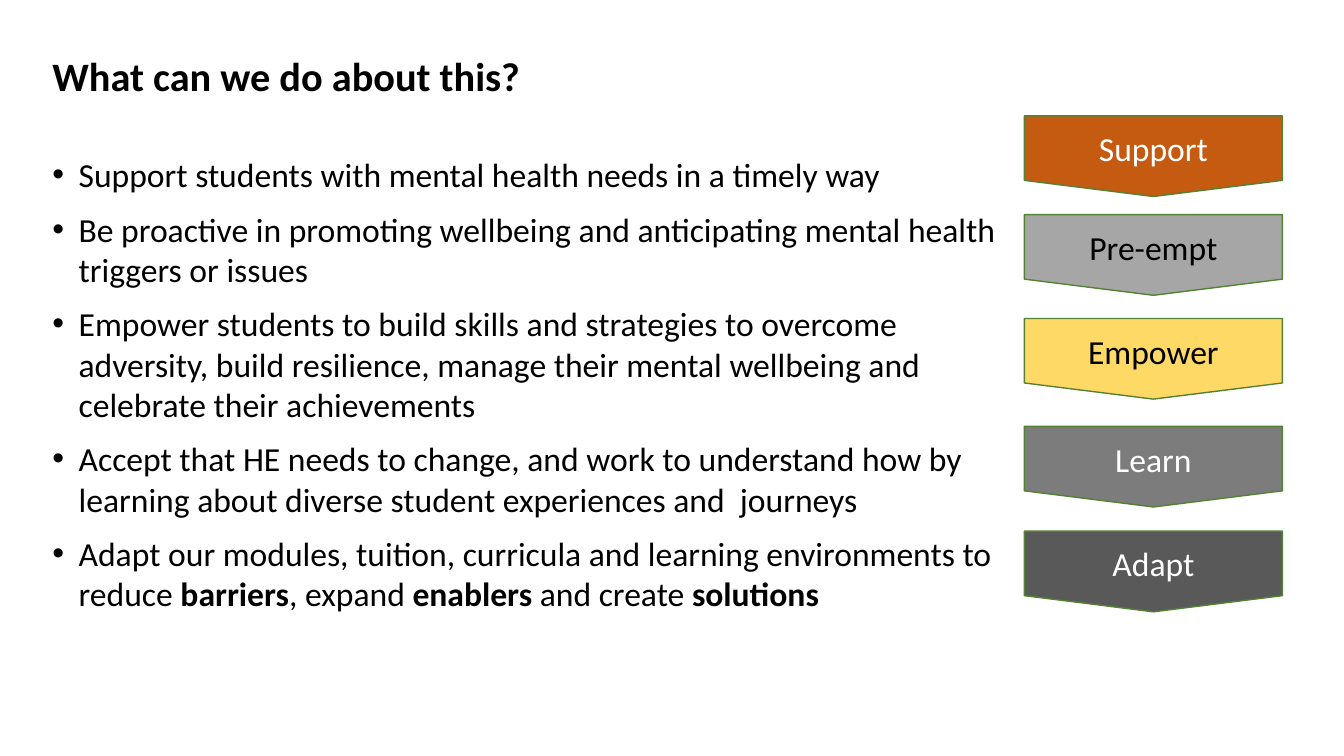
import pptx
import pptx.util
import pptx.dml.color
import pptx.enum.shapes
import pptx.enum.text
import lxml.etree
import pptx.oxml.ns

Inches = pptx.util.Inches
Pt = pptx.util.Pt

ACTIONS = [
    "Support students with mental health needs in a timely way",
    "Be proactive in promoting wellbeing and anticipating mental health triggers or issues",
    "Empower students to build skills and strategies to overcome adversity, "
    "build resilience, manage their mental wellbeing and celebrate their achievements",
    "Accept that HE needs to change, and work to understand how by "
    "learning about diverse student experiences and  journeys",
    "Adapt our modules, tuition, curricula and learning environments to "
    "reduce **barriers**, expand **enablers** and create **solutions**",
]

STEPS = [
    ("Support", 1.15, "C55A11", "FFFFFF"),
    ("Pre-empt", 2.13, "A6A6A6", "000000"),
    ("Empower", 3.16, "FFD966", "000000"),
    ("Learn", 4.23, "7C7C7C", "FFFFFF"),
    ("Adapt", 5.27, "595959", "FFFFFF"),
]


def color(value):
    return pptx.dml.color.RGBColor.from_string(value)


def write(para, text, size=24, fill="000000", bold=False, align=None):
    para.alignment = align
    for index, part in enumerate(text.split("**")):
        if part:
            span = para.add_run()
            span.text = part
            span.font.name = "Calibri"
            span.font.size = Pt(size)
            span.font.bold = bold or index % 2 == 1
            span.font.color.rgb = color(fill)


def add_bullet(para):
    props = para._p.get_or_add_pPr()
    props.set("marL", str(Inches(0.26)))
    props.set("indent", str(Inches(-0.26)))
    font = lxml.etree.SubElement(props, pptx.oxml.ns.qn("a:buFont"))
    font.set("typeface", "Arial")
    mark = lxml.etree.SubElement(props, pptx.oxml.ns.qn("a:buChar"))
    mark.set("char", "•")


def add_text_frame(page, left, top, width, height):
    box = page.shapes.add_textbox(Inches(left), Inches(top), Inches(width), Inches(height))
    frame = box.text_frame
    frame.word_wrap = True
    frame.margin_left = frame.margin_right = frame.margin_top = frame.margin_bottom = 0
    return frame


def add_title(page, text):
    frame = add_text_frame(page, 0.52, 0.5, 9.5, 0.5)
    frame.vertical_anchor = pptx.enum.text.MSO_ANCHOR.MIDDLE
    write(frame.paragraphs[0], text, size=28.8, bold=True)


def add_bullets(page, items):
    frame = add_text_frame(page, 0.52, 1.53, 9.39, 5.48)
    for index, item in enumerate(items):
        para = frame.add_paragraph() if index else frame.paragraphs[0]
        para.space_before = Pt(10)
        add_bullet(para)
        write(para, item)


def add_step(page, label, top, fill, text_fill):
    step = page.shapes.add_shape(
        pptx.enum.shapes.MSO_SHAPE.FLOWCHART_OFFPAGE_CONNECTOR,
        Inches(10.16), Inches(top), Inches(2.56), Inches(0.8))
    step.shadow.inherit = False
    step.fill.solid()
    step.fill.fore_color.rgb = color(fill)
    step.line.color.rgb = color("548235")
    step.line.width = Pt(1)
    step.text_frame.vertical_anchor = pptx.enum.text.MSO_ANCHOR.MIDDLE
    write(step.text_frame.paragraphs[0], label, fill=text_fill,
          align=pptx.enum.text.PP_ALIGN.CENTER)


def main():
    deck = pptx.Presentation()
    deck.slide_width = Inches(13.33)
    deck.slide_height = Inches(7.5)
    page = deck.slides.add_slide(deck.slide_layouts[6])
    add_bullets(page, ACTIONS)
    add_title(page, "What can we do about this?")
    for step in STEPS:
        add_step(page, *step)
    deck.save("out.pptx")


if __name__ == "__main__":
    main()
